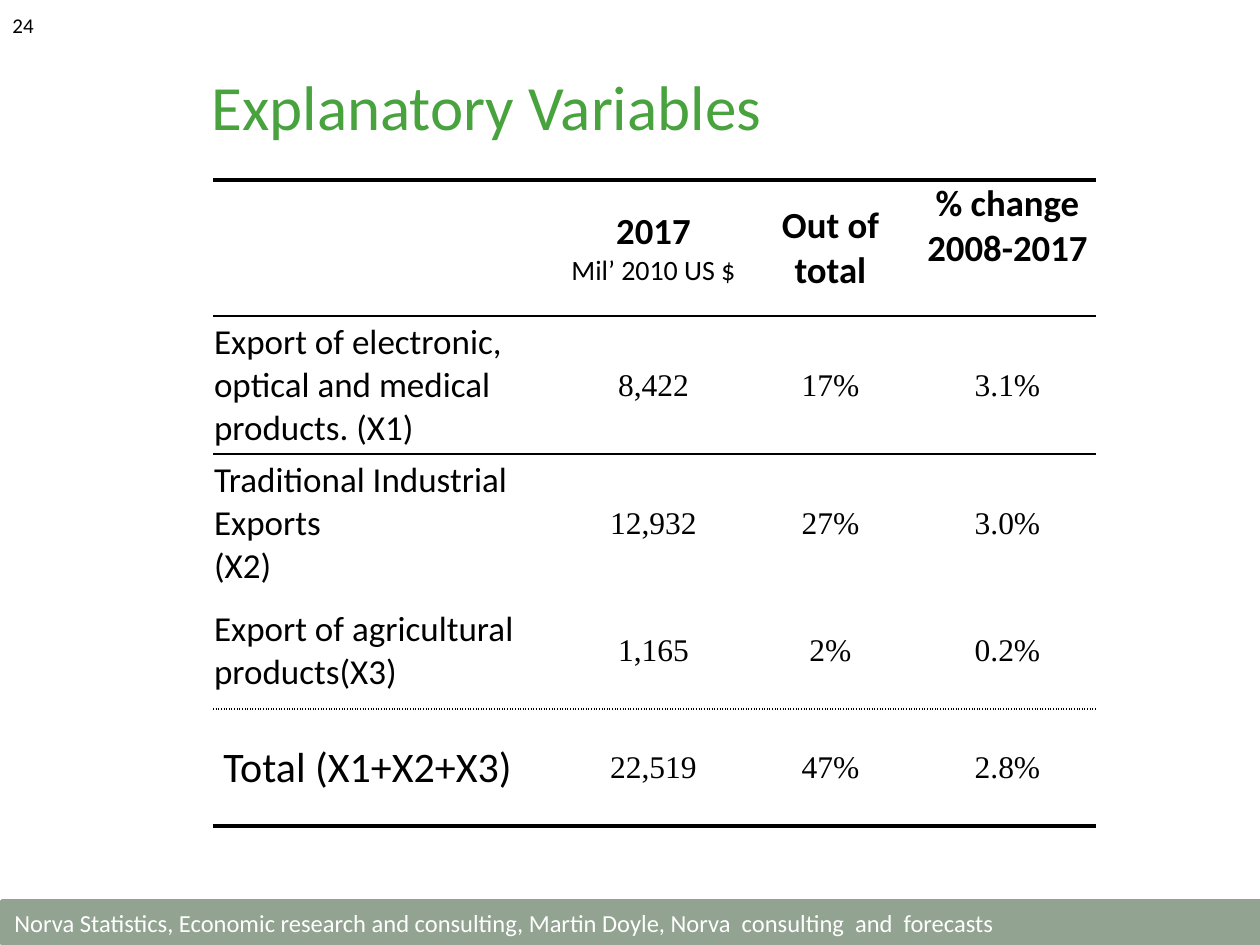
from dataclasses import dataclass

from lxml import etree
from pptx import Presentation
from pptx.dml.color import RGBColor
from pptx.enum.shapes import MSO_SHAPE
from pptx.enum.text import MSO_ANCHOR, PP_ALIGN
from pptx.oxml.ns import qn
from pptx.util import Emu, Pt

RECT = MSO_SHAPE.RECTANGLE
LEFT, CENTER = PP_ALIGN.LEFT, PP_ALIGN.CENTER
TOP, MIDDLE = MSO_ANCHOR.TOP, MSO_ANCHOR.MIDDLE
EMU_PER_PX = 914400 / 126


@dataclass(frozen=True)
class Theme:
    sans: str = "Calibri"
    serif: str = "Times New Roman"
    ink: str = "000000"
    paper: str = "FFFFFF"
    green: str = "48A23E"
    sage: str = "92A391"
    title: int = 36
    total: int = 24
    head: int = 21
    label: int = 20
    value: int = 18
    unit: int = 16
    footer: int = 14
    number: int = 12


T = Theme()


@dataclass(frozen=True)
class Para:
    text: str
    size: int
    font: str = T.sans
    color: str = T.ink
    bold: bool = False
    align: PP_ALIGN = LEFT


@dataclass(frozen=True)
class Cell:
    paras: tuple[Para, ...] = ()
    anchor: MSO_ANCHOR = MIDDLE


@dataclass(frozen=True)
class Rule:
    width: float
    dash: str = "solid"


@dataclass(frozen=True)
class Row:
    height: int
    cells: tuple[Cell, ...]


@dataclass(frozen=True)
class Box:
    x: int
    y: int
    w: int
    h: int
    para: Para


def px(n: int) -> Emu:
    return Emu(round(n * EMU_PER_PX))


def head(*lines: str, anchor: MSO_ANCHOR = MIDDLE) -> Cell:
    return Cell(tuple(Para(t, T.head, bold=True, align=CENTER) for t in lines), anchor)


def data_row(height: int, labels: tuple[str, ...], values: tuple[str, ...],
             size: int = T.label) -> Row:
    label = Cell(tuple(Para(t, size) for t in labels))
    cells = (Cell((Para(v, T.value, T.serif, align=CENTER),)) for v in values)
    return Row(height, (label, *cells))


YEAR = Cell((*head("2017").paras, Para("Mil’ 2010 US $", T.unit, align=CENTER)))
COLS = (352, 177, 177, 177)
ROWS = (
    Row(136, (Cell(), YEAR, head("Out of total"),
              head("% change", "2008-2017", anchor=TOP))),
    data_row(138, ("Export of electronic, optical and medical products. (X1)",),
             ("8,422", "17%", "3.1%")),
    data_row(138, ("Traditional Industrial Exports", "(X2)"),
             ("12,932", "27%", "3.0%")),
    data_row(117, ("Export of agricultural products(X3)",),
             ("1,165", "2%", "0.2%")),
    data_row(117, (" Total (X1+X2+X3)",), ("22,519", "47%", "2.8%"), T.total),
)
THICK, THIN, DOTTED = Rule(2.25), Rule(1), Rule(1, "sysDot")
RULES = (THICK, THIN, THIN, None, DOTTED, THICK)

FOOTER = Box(2, 901, 1261, 43, Para(
    "Norva Statistics, Economic research and consulting, Martin Doyle, "
    "Norva  consulting  and  forecasts", T.footer, color=T.paper))
TITLE = Box(35, 30, 903, 151,
            Para("Explanatory Variables", T.title, color=T.green, align=CENTER))
NUMBER = Box(0, 0, 294, 50, Para("24", T.number))


def write(tf, paras: tuple[Para, ...]) -> None:
    for i, para in enumerate(paras):
        p = tf.paragraphs[0] if i == 0 else tf.add_paragraph()
        p.alignment = para.align
        r = p.add_run()
        r.text = para.text
        fmt = {"name": para.font, "size": Pt(para.size), "bold": para.bold}
        for name, value in fmt.items():
            setattr(r.font, name, value)
        r.font.color.rgb = RGBColor.from_string(para.color)


def fill_box(sp, box: Box) -> None:
    tf = sp.text_frame
    for name, value in {"word_wrap": True, "vertical_anchor": MIDDLE}.items():
        setattr(tf, name, value)
    write(tf, (box.para,))


def add_text(slide, box: Box) -> None:
    fill_box(slide.shapes.add_textbox(*map(px, (box.x, box.y, box.w, box.h))), box)


def add_bar(slide, box: Box, color: str) -> None:
    sp = slide.shapes.add_shape(RECT, *map(px, (box.x, box.y, box.w, box.h)))
    sp.shadow.inherit = False
    sp.fill.solid()
    sp.fill.fore_color.rgb = RGBColor.from_string(color)
    sp.line.color.rgb = RGBColor.from_string(color)
    sp.line.width = Pt(2)
    fill_box(sp, box)


def add_border(cell, side: str, rule: Rule | None) -> None:
    ln = etree.SubElement(cell._tc.get_or_add_tcPr(), qn(f"a:{side}"))
    if rule is None:
        etree.SubElement(ln, qn("a:noFill"))
        return
    ln.set("w", str(Pt(rule.width)))
    fill = etree.SubElement(ln, qn("a:solidFill"))
    etree.SubElement(fill, qn("a:srgbClr"), val=T.ink)
    etree.SubElement(ln, qn("a:prstDash"), val=rule.dash)


def draw_cell(cell, content: Cell, top: Rule | None, bottom: Rule | None) -> None:
    fmt = {"margin_left": px(1), "margin_right": px(1), "margin_top": px(1),
           "margin_bottom": 0, "vertical_anchor": content.anchor}
    for name, value in fmt.items():
        setattr(cell, name, value)
    for side, rule in {"lnL": None, "lnR": None, "lnT": top, "lnB": bottom}.items():
        add_border(cell, side, rule)
    cell.fill.background()
    write(cell.text_frame, content.paras)


def add_grid(slide, x: int, y: int) -> None:
    size = sum(COLS), sum(row.height for row in ROWS)
    table = slide.shapes.add_table(len(ROWS), len(COLS), *map(px, (x, y, *size))).table
    for name in ("first_row", "horz_banding"):
        setattr(table, name, False)
    for col, width in zip(table.columns, COLS):
        col.width = px(width)
    for i, row in enumerate(ROWS):
        table.rows[i].height = px(row.height)
        for j, content in enumerate(row.cells):
            draw_cell(table.cell(i, j), content, RULES[i], RULES[i + 1])


def main() -> None:
    prs = Presentation()
    prs.slide_width, prs.slide_height = px(1260), px(945)
    slide = prs.slides.add_slide(prs.slide_layouts[6])
    add_bar(slide, FOOTER, T.sage)
    for box in (TITLE, NUMBER):
        add_text(slide, box)
    add_grid(slide, 213, 180)
    prs.save("out.pptx")


if __name__ == "__main__":
    main()
